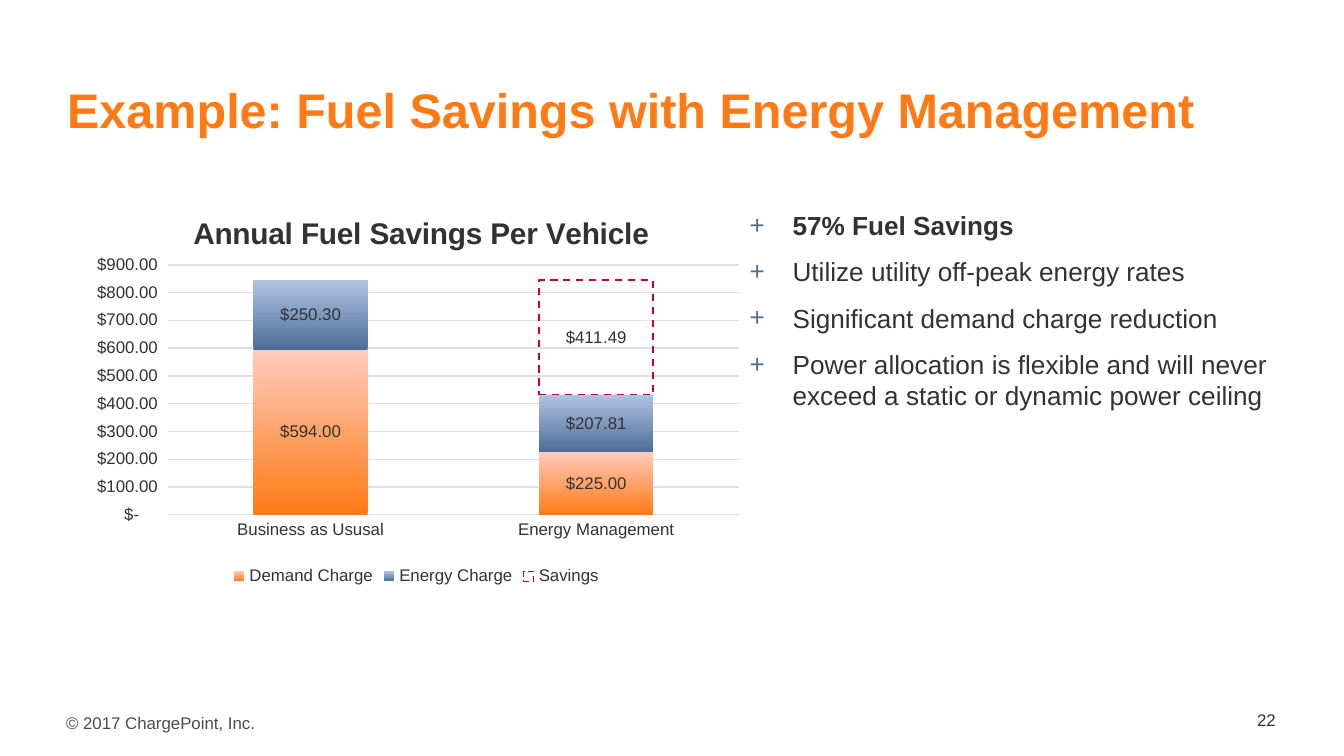
from lxml.etree import SubElement
from pptx import Presentation
from pptx.chart.data import CategoryChartData
from pptx.dml.color import RGBColor
from pptx.enum.chart import XL_CHART_TYPE as ChartType
from pptx.enum.chart import XL_LABEL_POSITION as LabelPosition
from pptx.enum.chart import XL_LEGEND_POSITION as LegendPosition
from pptx.enum.chart import XL_TICK_MARK as TickMark
from pptx.enum.dml import MSO_LINE_DASH_STYLE as Dash
from pptx.enum.text import MSO_ANCHOR as Anchor
from pptx.enum.text import PP_ALIGN as Align
from pptx.oxml import parse_xml
from pptx.oxml.ns import nsdecls, qn
from pptx.util import Cm, Pt

FONT = "Arial"
ORANGE = RGBColor(0xFF, 0x7A, 0x14)
PEACH = RGBColor(0xFF, 0xCB, 0xBD)
BLUE = RGBColor(0x4B, 0x6D, 0x98)
PALE_BLUE = RGBColor(0xB1, 0xC3, 0xE2)
BULLET_BLUE = RGBColor(0x54, 0x6E, 0x8F)
CRIMSON = RGBColor(0xCC, 0x00, 0x33)
DARK = RGBColor(0x32, 0x32, 0x32)
GRAY = RGBColor(0x4C, 0x4C, 0x4C)
GRID = RGBColor(0xE0, 0xE0, 0xE0)

ACCOUNTING = r'_("$"* #,##0.00_);_("$"* \(#,##0.00\);_("$"* "-"??_);_(@_)'
CATEGORIES = ["Business as Ususal", "Energy Management"]
SERIES = [
    ("Demand Charge", (594, 225), (ORANGE, PEACH)),
    ("Energy Charge", (250.3, 207.81), (BLUE, PALE_BLUE)),
    ("Savings", (None, 411.49), None),
]
BENEFITS = [
    "57% Fuel Savings",
    "Utilize utility off-peak energy rates",
    "Significant demand charge reduction",
    "Power allocation is flexible and will never exceed a static or dynamic power ceiling",
]


def style_font(font, size, color=DARK, bold=False):
    """Apply the slide font with a size, colour and weight."""
    font.name = FONT
    font.size = Pt(size)
    font.bold = bold
    font.color.rgb = color


def write_text(paragraph, text, align=Align.LEFT, **format):
    """Write one formatted run into a paragraph."""
    paragraph.alignment = align
    run = paragraph.add_run()
    run.text = text
    style_font(run.font, **format)


def add_box(slide, left, top, width, height, margins=(0, 0, 0, 0), anchor=Anchor.TOP, wrap=True):
    """Add a text box and return its text frame."""
    frame = slide.shapes.add_textbox(Cm(left), Cm(top), Cm(width), Cm(height)).text_frame
    frame.word_wrap = wrap
    frame.vertical_anchor = anchor
    frame.margin_left, frame.margin_top, frame.margin_right, frame.margin_bottom = map(Cm, margins)
    return frame


def add_bullet(paragraph):
    """Give a paragraph a hanging coloured plus sign."""
    properties = paragraph._p.get_or_add_pPr()
    properties.set("marL", str(Cm(0.81)))
    properties.set("indent", str(-Cm(0.81)))
    color = SubElement(properties, qn("a:buClr"))
    SubElement(color, qn("a:srgbClr")).set("val", str(BULLET_BLUE))
    SubElement(properties, qn("a:buFont")).set("typeface", FONT)
    SubElement(properties, qn("a:buChar")).set("char", "+")


def add_benefits(slide):
    """Add the bulleted list with a bold first item."""
    frame = add_box(slide, 14.17, 3.96, 10.59, 8.31)
    for index, text in enumerate(BENEFITS):
        paragraph = frame.add_paragraph() if index else frame.paragraphs[0]
        add_bullet(paragraph)
        paragraph.space_before = Pt(6 if index else 0)
        paragraph.space_after = Pt(2)
        write_text(paragraph, text, size=14, bold=index == 0)


def make_layout(target=None, **fractions):
    """Build a manual chart layout from fractions of the chart area."""
    layout = parse_xml(f"<c:layout {nsdecls('c')}><c:manualLayout/></c:layout>")
    manual = layout[0]
    if target:
        SubElement(manual, qn("c:layoutTarget")).set("val", target)
    for axis in ("x", "y"):
        SubElement(manual, qn(f"c:{axis}Mode")).set("val", "edge")
    for name, value in fractions.items():
        SubElement(manual, qn(f"c:{name}")).set("val", str(value))
    return layout


def place_plot(chart):
    """Fix the inner plot area within the chart."""
    plot_area = chart._chartSpace.chart.plotArea
    for layout in plot_area.findall(qn("c:layout")):
        plot_area.remove(layout)
    plot_area.insert(0, make_layout("inner", x=0.13, y=0.19, w=0.85, h=0.62))


def add_title(chart, text):
    """Write and place the chart title."""
    frame = chart.chart_title.text_frame
    write_text(frame.paragraphs[0], text, align=Align.CENTER, size=16, bold=True)
    title = chart.chart_title._element
    for layout in title.findall(qn("c:layout")):
        title.remove(layout)
    title.find(qn("c:tx")).addnext(make_layout(x=0.16, y=0.05))


def style_axes(chart):
    """Style both axes and the value gridlines."""
    for axis in (chart.category_axis, chart.value_axis):
        axis.major_tick_mark = axis.minor_tick_mark = TickMark.NONE
        style_font(axis.tick_labels.font, 9)
    values = chart.value_axis
    values.minimum_scale, values.maximum_scale, values.major_unit = 0, 900, 100
    values.tick_labels.number_format = ACCOUNTING
    values.tick_labels.number_format_is_linked = False
    values.format.line.fill.background()
    for line in (chart.category_axis.format.line, values.major_gridlines.format.line):
        line.color.rgb = GRID
        line.width = Pt(0.75)


def style_series(series, gradient):
    """Fill a series with a gradient, or outline it with dashes, and label it."""
    fill, line = series.format.fill, series.format.line
    if gradient:
        fill.gradient()
        fill.gradient_angle = 90
        for stop, color in zip(fill.gradient_stops, gradient):
            stop.color.rgb = color
        line.fill.background()
    else:
        fill.background()
        line.color.rgb = CRIMSON
        line.width = Pt(1)
        line.dash_style = Dash.DASH
    labels = series.data_labels
    labels.show_value = True
    labels.position = LabelPosition.CENTER
    labels.number_format = ACCOUNTING
    labels.number_format_is_linked = False
    style_font(labels.font, 9)


def add_savings_chart(slide):
    """Add the stacked column chart of annual fuel costs."""
    data = CategoryChartData(number_format=ACCOUNTING)
    data.categories = CATEGORIES
    for name, values, _ in SERIES:
        data.add_series(name, values)
    chart = slide.shapes.add_chart(
        ChartType.COLUMN_STACKED, Cm(1.52), Cm(3.56), Cm(12.7), Cm(7.62), data
    ).chart
    style_font(chart.font, 10)
    add_title(chart, "Annual Fuel Savings Per Vehicle")
    place_plot(chart)
    style_axes(chart)
    plot = chart.plots[0]
    plot.gap_width, plot.overlap = 150, 100
    plot.vary_by_categories = False
    for series, (_, _, gradient) in zip(plot.series, SERIES):
        style_series(series, gradient)
    chart.has_legend = True
    chart.legend.position = LegendPosition.BOTTOM
    chart.legend.include_in_layout = False
    style_font(chart.legend.font, 9)


def main():
    """Build and save the slide."""
    presentation = Presentation()
    presentation.slide_width, presentation.slide_height = Cm(25.4), Cm(14.29)
    slide = presentation.slides.add_slide(presentation.slide_layouts[6])
    footer = add_box(slide, 1.25, 13.34, 3.91, 0.64, (0, 0.13, 0.25, 0.13), wrap=False)
    write_text(footer.paragraphs[0], "© 2017 ChargePoint, Inc.", size=9, color=GRAY)
    title = add_box(slide, 1.27, 1.52, 22.86, 1.12)
    write_text(title.paragraphs[0], "Example: Fuel Savings with Energy Management",
               size=26, color=ORANGE, bold=True)
    number = add_box(slide, 21.39, 13.28, 2.97, 0.64, (0.25, 0.13, 0.25, 0.13), Anchor.MIDDLE)
    write_text(number.paragraphs[0], "22", align=Align.RIGHT, size=9)
    add_benefits(slide)
    add_savings_chart(slide)
    presentation.save("out.pptx")


if __name__ == "__main__":
    main()
